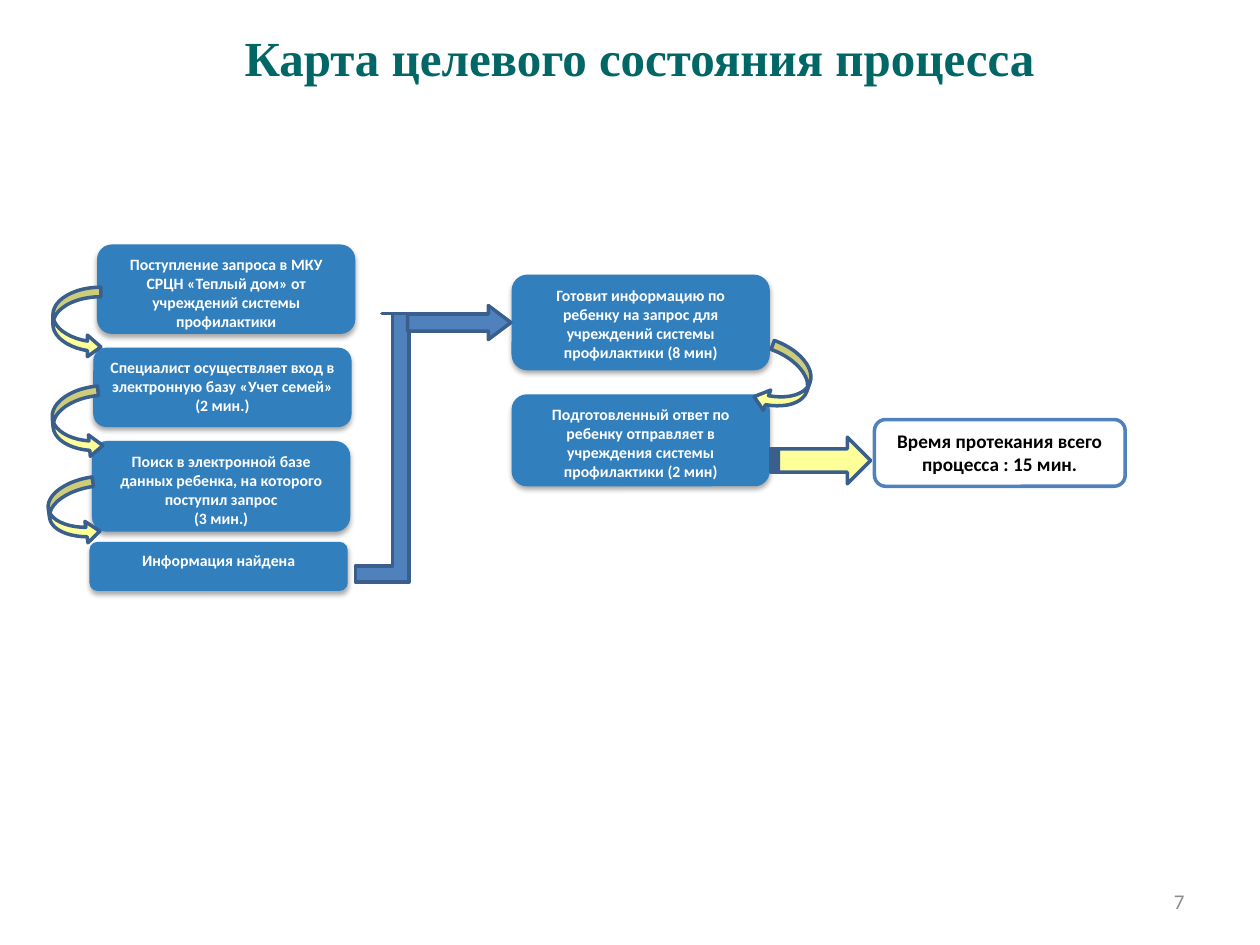
from lxml import etree
from pptx import Presentation
from pptx.dml.color import RGBColor
from pptx.enum.shapes import MSO_SHAPE
from pptx.enum.text import MSO_ANCHOR, PP_ALIGN
from pptx.oxml import parse_xml
from pptx.oxml.ns import nsdecls, qn
from pptx.util import Inches, Pt

ROUNDED = MSO_SHAPE.ROUNDED_RECTANGLE
CURVED = MSO_SHAPE.CURVED_RIGHT_ARROW
STRIPED = MSO_SHAPE.STRIPED_RIGHT_ARROW
BENT_UP = MSO_SHAPE.BENT_UP_ARROW
UP = MSO_SHAPE.UP_ARROW
TOP, MIDDLE = MSO_ANCHOR.TOP, MSO_ANCHOR.MIDDLE
CENTER, RIGHT = PP_ALIGN.CENTER, PP_ALIGN.RIGHT

COLORS = {
    "title": "006666",
    "number": "8C8C8C",
    "step": "327FBE",
    "hint": "FFFF99",
    "route": "4F81BD",
    "outline": "3A5F8C",
    "white": "FFFFFF",
    "black": "000000",
}
CURVE = (0.199, 0.45, 0.279)
CURVE_WIDTH = 0.38
STEP_WIDTH = 2.05


def color(name):
    return RGBColor.from_string(COLORS[name])


def write(shape, lines, size, ink, bold=True, font="Calibri", align=CENTER, anchor=TOP):
    frame = shape.text_frame
    frame.word_wrap = True
    frame.vertical_anchor = anchor
    frame.text = "\n".join(lines)
    for para in frame.paragraphs:
        para.alignment = align
        para.font.name = font
        para.font.size = Pt(size)
        para.font.bold = bold
        para.font.color.rgb = color(ink)


def add_label(page, box, text, size, ink, **style):
    label = page.shapes.add_textbox(*map(Inches, box))
    write(label, [text], size, ink, **style)


def add_block(page, kind, box, fill, line=None):
    block = page.shapes.add_shape(kind, *map(Inches, box))
    block.shadow.inherit = False
    block.fill.solid()
    block.fill.fore_color.rgb = color(fill)
    if line:
        block.line.color.rgb = color(line)
        block.line.width = Pt(2)
    else:
        block.line.fill.background()
    return block


def add_arrow(page, kind, box, fill, adjust=(), turn=0, mirrored=False):
    arrow = add_block(page, kind, box, fill, "outline")
    for index, value in enumerate(adjust):
        arrow.adjustments[index] = value
    arrow.rotation = turn
    if mirrored:
        arrow._element.spPr.find(qn("a:xfrm")).set("flipH", "1")


def add_step(page, box, lines):
    step = add_block(page, ROUNDED, box, "step")
    # Soft shadow straight below the step
    effects = step._element.spPr.find(qn("a:effectLst"))
    shadow = parse_xml(
        f'<a:outerShdw {nsdecls("a")} blurRad="{Pt(3.1)}" dist="{Pt(1.8)}" '
        'dir="5400000" rotWithShape="0"/>'
    )
    tint = etree.SubElement(shadow, qn("a:srgbClr"), val=COLORS["black"])
    etree.SubElement(tint, qn("a:alpha"), val="35000")
    effects.append(shadow)
    write(step, lines, 9, "white")


def add_request_column(page, left, top):
    # Steps: offset from the column's corner, height, text
    steps = [
        (0.38, 0, 0.71, ["Поступление запроса в МКУ СРЦН «Теплый дом» от учреждений системы профилактики"]),
        (0.35, 0.82, 0.63, ["Специалист осуществляет вход в электронную базу «Учет семей» (2 мин.)"]),
        (0.34, 1.56, 0.72, ["Поиск в электронной базе данных ребенка, на которого поступил запрос", "(3 мин.)"]),
        (0.32, 2.36, 0.39, ["Информация найдена"]),
    ]
    for dx, dy, height, lines in steps:
        add_step(page, (left + dx, top + dy, STEP_WIDTH, height), lines)
    # Curved arrows leading from each step to the next
    for dx, dy, height, turn in [(0.03, 0.34, 0.56, 0), (0.03, 1.14, 0.56, -5.1), (0, 1.87, 0.52, -8.1)]:
        box = (left + dx, top + dy, CURVE_WIDTH, height)
        add_arrow(page, CURVED, box, "hint", CURVE, turn)


def add_route(page, left, top):
    # Rising elbow, then an arrow to the next column
    add_arrow(page, BENT_UP, (left, top + 0.34, 0.51, 2.13), "route", (0.25, 0.293, 0))
    add_arrow(page, UP, (left + 0.69, top, 0.27, 0.82), "route", (0.5, 0.665), 90)


def add_reply_column(page, left, top):
    steps = [
        (0, 0.76, "Готовит информацию по ребенку на запрос для учреждений системы профилактики (8 мин)"),
        (0.95, 0.73, "Подготовленный ответ по ребенку отправляет в учреждения системы профилактики (2 мин)"),
    ]
    for dy, height, text in steps:
        add_step(page, (left, top + dy, STEP_WIDTH, height), [text])
    box = (left + 1.98, top + 0.57, CURVE_WIDTH, 0.56)
    add_arrow(page, CURVED, box, "hint", CURVE, 19.8, mirrored=True)


def add_total(page, left, top):
    # Arrow to the total duration
    add_arrow(page, STRIPED, (left, top + 0.14, 0.79, 0.37), "hint")
    total = add_block(page, ROUNDED, (left + 0.82, top, 1.99, 0.53), "white", "route")
    write(total, ["Время протекания всего процесса : 15 мин."], 11, "black")


def main():
    deck = Presentation()
    deck.slide_width, deck.slide_height = Inches(10), Inches(7.5)
    page = deck.slides.add_slide(deck.slide_layouts[6])

    add_label(page, (7.17, 6.95, 2.33, 0.4), "7", 12, "number",
              bold=False, align=RIGHT, anchor=MIDDLE)
    add_label(page, (1.61, 0.17, 6.93, 0.57), "Карта целевого состояния процесса",
              28, "title", font="Times New Roman")
    add_request_column(page, 0.39, 1.94)
    add_reply_column(page, 4.06, 2.18)
    add_total(page, 6.12, 3.33)
    add_route(page, 2.82, 2.15)

    deck.save("out.pptx")


if __name__ == "__main__":
    main()
